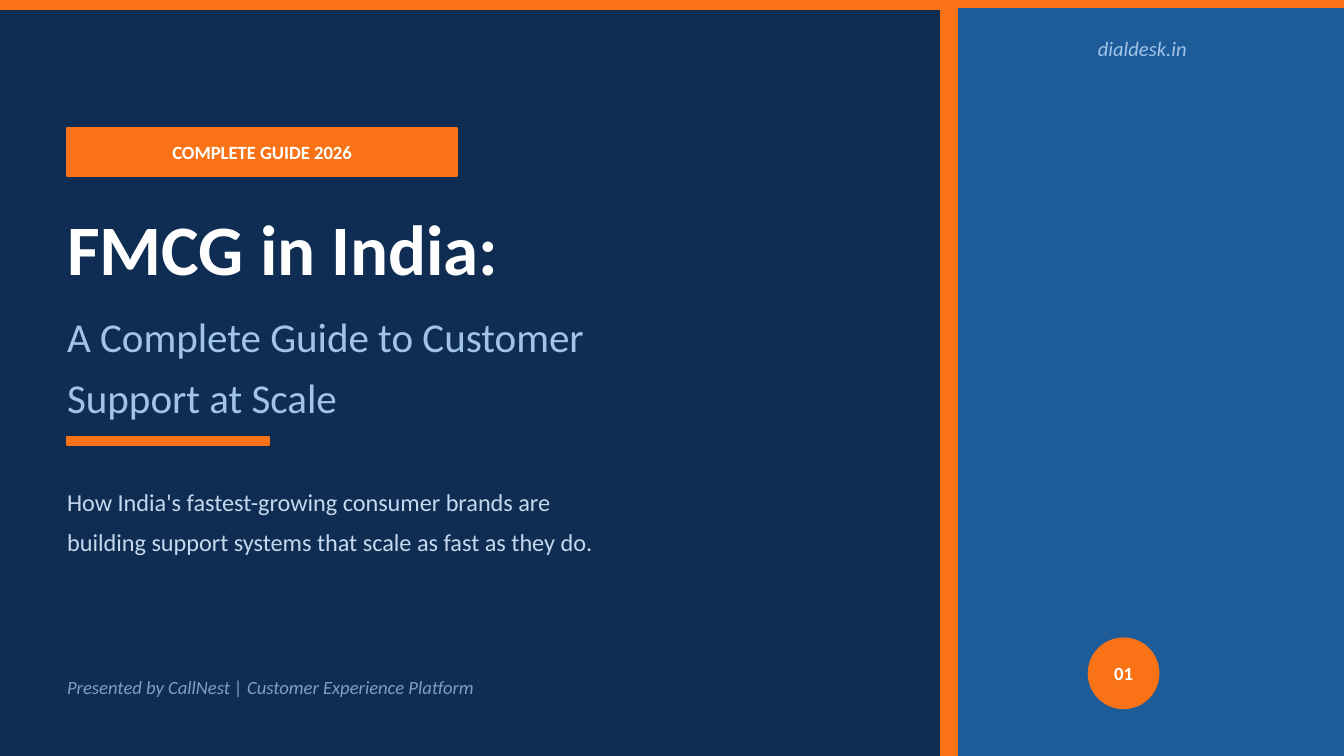
from pptx import Presentation
from pptx.dml.color import RGBColor
from pptx.enum.shapes import MSO_SHAPE
from pptx.enum.text import MSO_ANCHOR, PP_ALIGN
from pptx.util import Inches, Pt

RECTANGLE, OVAL = MSO_SHAPE.RECTANGLE, MSO_SHAPE.OVAL
MIDDLE = MSO_ANCHOR.MIDDLE
LEFT, CENTER = PP_ALIGN.LEFT, PP_ALIGN.CENTER

FONT = "Calibri"
NAVY, BLUE, ORANGE, WHITE = "0F2D52", "1E5C99", "F97316", "FFFFFF"
SKY, PALE, MUTED = "A0C4E8", "C5D8ED", "7A9FC2"

SLIDE_WIDTH = 10
SLIDE_HEIGHT = SLIDE_WIDTH * 9 / 16
BAR_HEIGHT = 0.07
PANEL_LEFT = 7
MARGIN = 0.5
TEXT_WIDTH = 6.3


def color(hex_string):
    return RGBColor.from_string(hex_string)


def add_block(slide, kind, left, top, width, height, fill):
    """Add a solid shape with an outline of the same colour."""
    block = slide.shapes.add_shape(
        kind, Inches(left), Inches(top), Inches(width), Inches(height))
    block.shadow.inherit = False
    block.fill.solid()
    block.fill.fore_color.rgb = color(fill)
    block.line.color.rgb = color(fill)
    block.line.width = Pt(1)
    return block


def write_lines(shape, lines, size, text_color, bold=False, italic=False,
                align=LEFT, spacing=None):
    """Fill a shape with one paragraph per line, without insets."""
    frame = shape.text_frame
    frame.word_wrap = True
    frame.vertical_anchor = MIDDLE
    frame.margin_left = frame.margin_right = 0
    frame.margin_top = frame.margin_bottom = 0
    for index, line in enumerate(lines):
        para = frame.add_paragraph() if index else frame.paragraphs[0]
        para.text = line
        para.alignment = align
        if spacing:
            para.line_spacing = spacing
        para.font.name = FONT
        para.font.size = Pt(size)
        para.font.bold = bold
        para.font.italic = italic
        para.font.color.rgb = color(text_color)


def add_text(slide, left, top, width, height, lines, size, text_color, **style):
    box = slide.shapes.add_textbox(
        Inches(left), Inches(top), Inches(width), Inches(height))
    write_lines(box, lines, size, text_color, **style)


def add_label(slide, kind, left, top, width, height, label):
    """Add an orange shape with a bold white label."""
    block = add_block(slide, kind, left, top, width, height, ORANGE)
    write_lines(block, [label], 10, WHITE, bold=True, align=CENTER)


def main():
    deck = Presentation()
    deck.slide_width, deck.slide_height = Inches(SLIDE_WIDTH), Inches(SLIDE_HEIGHT)
    slide = deck.slides.add_slide(deck.slide_layouts[6])
    slide.background.fill.solid()
    slide.background.fill.fore_color.rgb = color(NAVY)

    # Top bar and right panel with its orange edge
    add_block(slide, RECTANGLE, 0, 0, SLIDE_WIDTH, BAR_HEIGHT, ORANGE)
    for width, fill in ((SLIDE_WIDTH - PANEL_LEFT, BLUE), (0.12, ORANGE)):
        add_block(slide, RECTANGLE, PANEL_LEFT, BAR_HEIGHT, width,
                  SLIDE_HEIGHT - BAR_HEIGHT, fill)

    # Panel content: web address and page number
    add_text(slide, 7.2, 0.22, 2.6, 0.28, ["dialdesk.in"], 11, SKY,
             italic=True, align=CENTER)
    add_label(slide, OVAL, 8.1, 4.75, 0.52, 0.52, "01")

    # Badge, title and subtitle
    add_label(slide, RECTANGLE, MARGIN, 0.95, 2.9, 0.36, "COMPLETE GUIDE 2026")
    add_text(slide, MARGIN, 1.48, TEXT_WIDTH, 0.72, ["FMCG in India:"],
             38, WHITE, bold=True)
    add_text(slide, MARGIN, 2.22, TEXT_WIDTH, 0.92,
             ["A Complete Guide to Customer", "Support at Scale"],
             22, SKY, spacing=1.25)

    # Accent rule, tagline and presenter
    add_block(slide, RECTANGLE, MARGIN, 3.25, 1.5, 0.06, ORANGE)
    add_text(slide, MARGIN, 3.42, TEXT_WIDTH, 0.85,
             ["How India's fastest-growing consumer brands are",
              "building support systems that scale as fast as they do."],
             13, PALE, spacing=1.35)
    add_text(slide, MARGIN, 4.95, TEXT_WIDTH, 0.32,
             ["Presented by CallNest | Customer Experience Platform"],
             10, MUTED, italic=True)

    deck.save("out.pptx")


if __name__ == "__main__":
    main()
